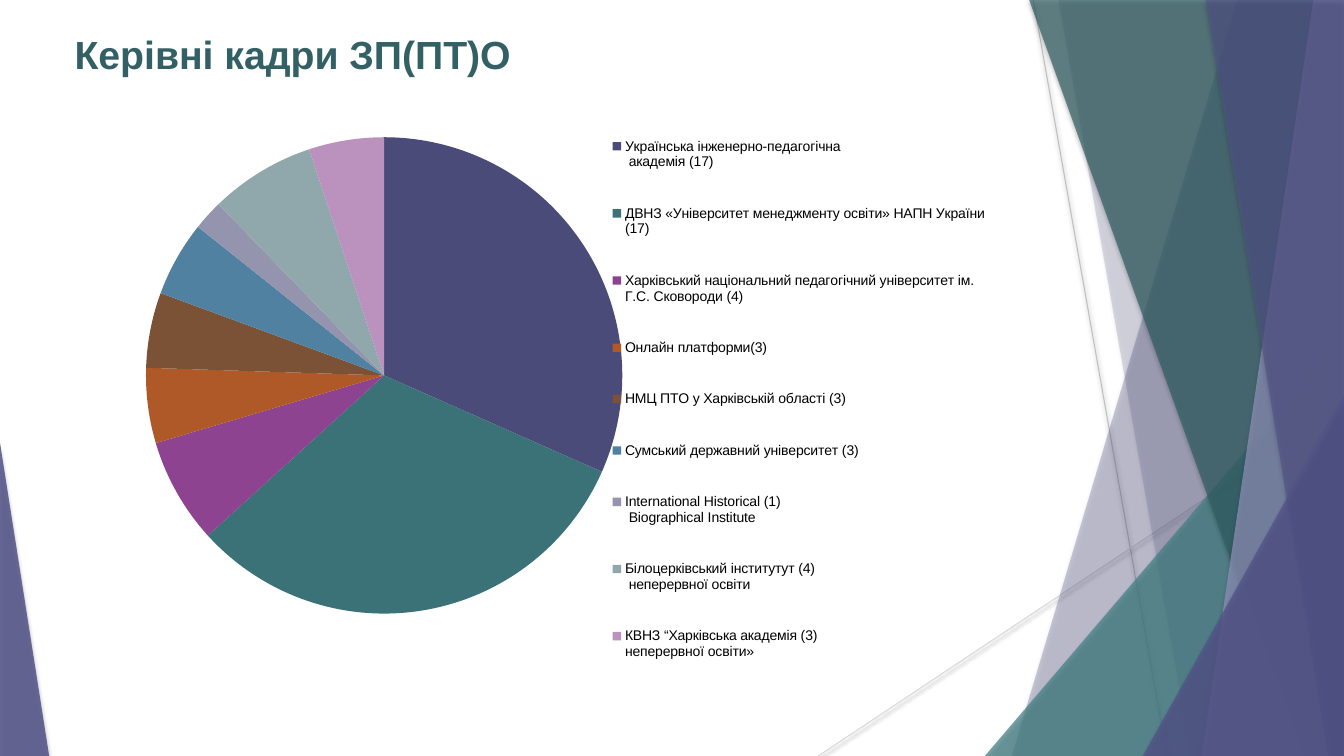
from dataclasses import dataclass
from typing import Optional

import pptx
import pptx.chart.data
import pptx.dml.color
import pptx.enum.chart
import pptx.enum.shapes
import pptx.enum.text
import pptx.oxml
import pptx.oxml.ns
import pptx.util
from lxml import etree

Cm = pptx.util.Cm
Pt = pptx.util.Pt
qn = pptx.oxml.ns.qn


@dataclass(frozen=True)
class Theme:
    font: str = "Arial"
    title_size: int = 28
    legend_size: int = 10
    title: str = "326065"
    text: str = "000000"
    indigo: str = "53548A"
    teal: str = "438086"
    deep_teal: str = "326065"
    lavender: str = "9394BE"
    grey: str = "BFBFBF"
    light_grey: str = "D9D9D9"


@dataclass(frozen=True)
class Ray:
    x1: float
    y1: float
    x2: float
    y2: float
    color: str


@dataclass(frozen=True)
class Facet:
    """Band from a slanted left side to the right edge of the slide."""
    top: float
    bottom: float
    color: str
    alpha: int


@dataclass(frozen=True)
class Corner:
    """Right triangle standing on the bottom edge of the slide."""
    left: float
    width: float
    height: float
    peak: int
    color: str
    alpha: int


@dataclass(frozen=True)
class Sector:
    label: str
    value: int
    color: str


T = Theme()
W, H = 33.87, 19.05

RAYS = [
    Ray(26.04, 0, 29.41, H, T.grey),
    Ray(W, 10.24, 20.62, H, T.light_grey),
]
DECOR = [
    Facet(31.19, 25.5, T.indigo, 30),
    Facet(26.67, 30.02, T.indigo, 20),
    Corner(24.82, 9.05, 10.59, 1, T.teal, 72),
    Facet(25.93, 32.79, T.deep_teal, 70),
    Facet(33.1, 30.28, T.lavender, 70),
    Facet(30.38, 33.48, T.indigo, 65),
    Corner(28.8, 5.07, 9.07, 1, T.indigo, 80),
    Corner(0, 1.24, 7.9, 0, T.indigo, 85),
]
SECTORS = [
    Sector("Українська інженерно-педагогічна\n академія (17)", 31, "4A4B79"),
    Sector("ДВНЗ «Університет менеджменту освіти» НАПН України (17)", 31, "3B7277"),
    Sector("Харківський національний педагогічний університет ім. Г.С. Сковороди (4)",
           7, "8E4391"),
    Sector("Онлайн платформи(3)", 5, "AE5927"),
    Sector("НМЦ ПТО у Харківській області (3)", 5, "7B5235"),
    Sector("Сумський державний університет (3)", 5, "5181A1"),
    Sector("International Historical (1)\n Biographical Institute", 2, "9494AE"),
    Sector("Білоцерківський інститутут (4)\n неперервної освіти", 7, "90A8AB"),
    Sector("КВНЗ “Харківська академія (3)\nнеперервної освіти»", 5, "BB91BD"),
]


def rgb(color: str) -> pptx.dml.color.RGBColor:
    return pptx.dml.color.RGBColor.from_string(color)


def set_shadow(s, alpha: int, blur: float, dist: float) -> None:
    spPr = s._element.spPr
    for old in spPr.findall(qn("a:effectLst")):
        spPr.remove(old)
    effects = etree.SubElement(spPr, qn("a:effectLst"))
    shadow = etree.SubElement(effects, qn("a:outerShdw"), blurRad=str(Pt(blur)),
                              dist=str(Pt(dist)), dir="5400000", rotWithShape="0")
    color = etree.SubElement(shadow, qn("a:srgbClr"), val="000000")
    etree.SubElement(color, qn("a:alpha"), val=str(alpha * 1000))


def set_glass(s, color: str, alpha: int) -> None:
    s.fill.solid()
    s.fill.fore_color.rgb = rgb(color)
    clr = s._element.spPr.find(qn("a:solidFill"))[0]
    etree.SubElement(clr, qn("a:alpha"), val=str(alpha * 1000))
    s.line.fill.background()
    set_shadow(s, 35, 3, 2)


def add_ray(shapes, ray: Ray) -> None:
    s = shapes.add_connector(pptx.enum.shapes.MSO_CONNECTOR.STRAIGHT,
                             Cm(ray.x1), Cm(ray.y1), Cm(ray.x2), Cm(ray.y2))
    s.line.color.rgb = rgb(ray.color)
    s.line.width = Pt(0.75)
    set_shadow(s, 38, 3.1, 1.6)


def add_facet(shapes, facet: Facet) -> None:
    top = Cm(-0.02)
    builder = shapes.build_freeform(Cm(facet.top), top)
    builder.add_line_segments([(Cm(W), top), (Cm(W), Cm(H)), (Cm(facet.bottom), Cm(H))],
                              close=True)
    set_glass(builder.convert_to_shape(), facet.color, facet.alpha)


def add_corner(shapes, corner: Corner) -> None:
    s = shapes.add_shape(pptx.enum.shapes.MSO_SHAPE.ISOSCELES_TRIANGLE, Cm(corner.left),
                         Cm(H - corner.height), Cm(corner.width), Cm(corner.height))
    s.adjustments[0] = corner.peak
    set_glass(s, corner.color, corner.alpha)


def set_text(tf, text: str, *, size: int, color: str, bold: bool = False,
             spacing: Optional[float] = None) -> None:
    tf.word_wrap = True
    tf.auto_size = pptx.enum.text.MSO_AUTO_SIZE.NONE
    tf.vertical_anchor = pptx.enum.text.MSO_ANCHOR.MIDDLE
    tf.margin_left = tf.margin_top = tf.margin_right = tf.margin_bottom = 0
    p = tf.paragraphs[0]
    p.alignment = pptx.enum.text.PP_ALIGN.LEFT
    p.line_spacing = spacing
    r = p.add_run()
    r.text = text
    r.font.name, r.font.size, r.font.bold = T.font, Pt(size), bold
    r.font.color.rgb = rgb(color)


def set_layout(parent, index: int, x: float, y: float, w: float, h: float,
               inner: bool = False) -> None:
    for old in parent.findall(qn("c:layout")):
        parent.remove(old)
    layout = etree.Element(qn("c:layout"))
    manual = etree.SubElement(layout, qn("c:manualLayout"))
    values = {"layoutTarget": "inner"} if inner else {}
    values.update(xMode="edge", yMode="edge", x=x, y=y, w=w, h=h)
    for name, value in values.items():
        etree.SubElement(manual, qn(f"c:{name}"), val=str(value))
    parent.insert(index, layout)


def add_pie(shapes, sectors: list[Sector]) -> None:
    data = pptx.chart.data.CategoryChartData()
    data.categories = [sector.label for sector in sectors]
    data.add_series("Series 1", [sector.value for sector in sectors])
    chart = shapes.add_chart(pptx.enum.chart.XL_CHART_TYPE.PIE, Cm(2.79), Cm(2.59),
                             Cm(22.23), Cm(14.94), data).chart
    chart.has_title = False
    chart.font.name, chart.font.size = T.font, Pt(T.legend_size)
    chart.font.color.rgb = rgb(T.text)
    plot = chart.plots[0]
    plot.vary_by_categories = True
    for i, sector in enumerate(sectors):
        fmt = plot.series[0].points[i].format
        fmt.fill.solid()
        fmt.fill.fore_color.rgb = rgb(sector.color)
        fmt.line.fill.background()
    chart.has_legend = True
    chart.legend.position = pptx.enum.chart.XL_LEGEND_POSITION.RIGHT
    chart.legend.include_in_layout = False
    set_layout(chart._chartSpace.chart.plotArea, 0, 0.04, 0.01, 0.54, 0.9, inner=True)
    set_layout(chart.legend._element, 1, 0.56, 0, 0.44, 1)


def main() -> None:
    prs = pptx.Presentation()
    prs.slide_width, prs.slide_height = Cm(W), Cm(H)
    slide = prs.slides.add_slide(prs.slide_layouts[5])

    # Background decoration
    for ray in RAYS:
        add_ray(slide.shapes, ray)
    for part in DECOR:
        if isinstance(part, Facet):
            add_facet(slide.shapes, part)
        else:
            add_corner(slide.shapes, part)

    # Title
    title = slide.shapes.title
    title.left, title.top, title.width, title.height = Cm(1.88), Cm(0.84), Cm(23.88), Cm(1.19)
    set_text(title.text_frame, "Керівні кадри ЗП(ПТ)О", size=T.title_size,
             color=T.title, bold=True, spacing=0.9)

    # Pie chart
    add_pie(slide.shapes, SECTORS)

    prs.save("out.pptx")


if __name__ == "__main__":
    main()
